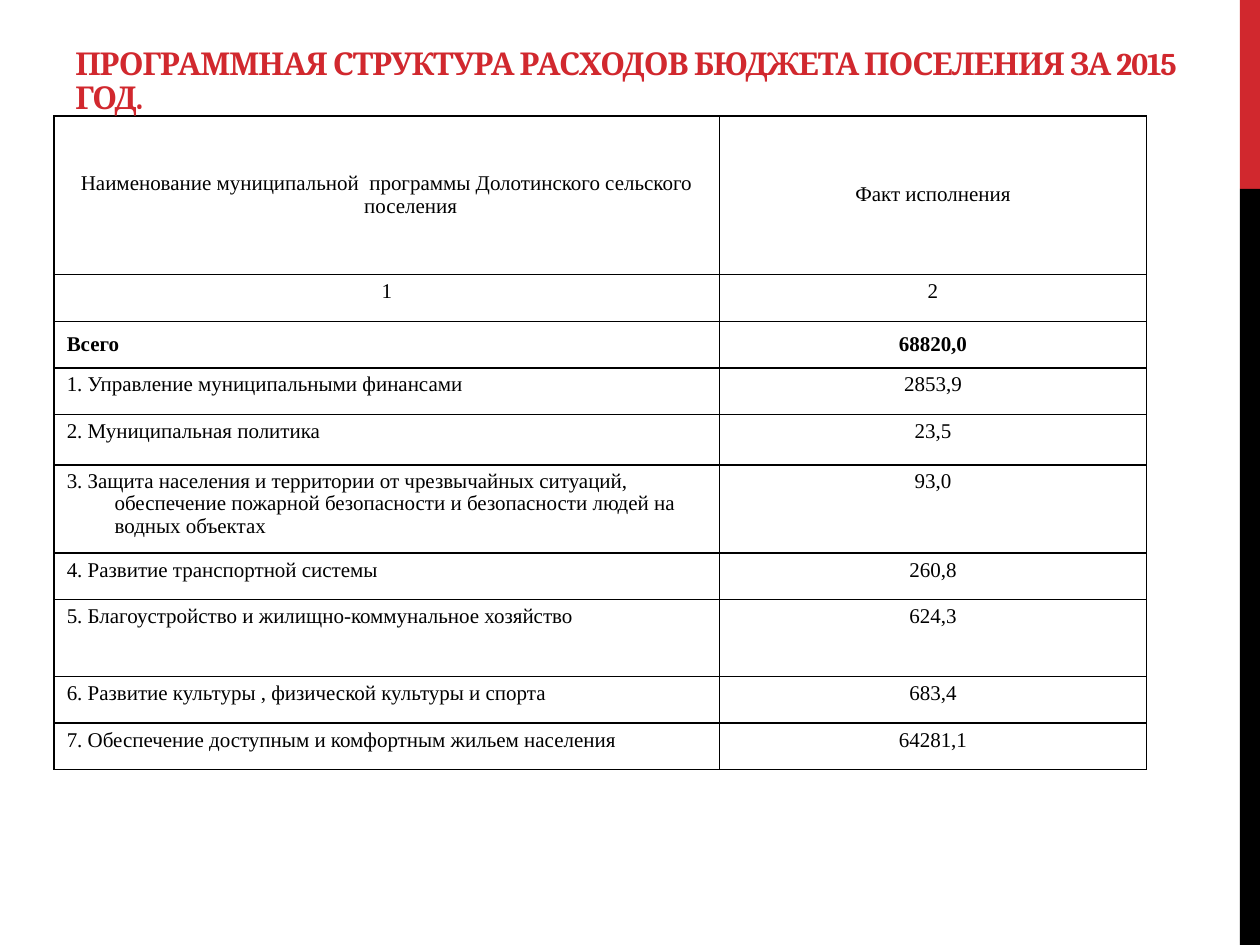
from dataclasses import dataclass
from typing import NamedTuple

from lxml.etree import SubElement
from pptx import Presentation
from pptx.dml.color import RGBColor
from pptx.enum.shapes import MSO_SHAPE
from pptx.enum.text import MSO_ANCHOR, PP_ALIGN
from pptx.oxml.ns import qn
from pptx.util import Inches, Pt


@dataclass(frozen=True)
class Theme:
    red: RGBColor = RGBColor(0xD1, 0x28, 0x2E)
    black: RGBColor = RGBColor(0, 0, 0)
    title_font: str = "Cambria"
    table_font: str = "Times New Roman"
    title_size: int = 18
    table_size: int = 12
    title_tracking: float = -0.6
    border: int = 1
    hanging: float = 0.38


class Band(NamedTuple):
    top: float
    height: float
    color: RGBColor


class Line(NamedTuple):
    name: str
    value: str
    height: float = 0.37
    middle: bool = False
    bold: bool = False
    centered: bool = False


THEME = Theme()
WIDTH, HEIGHT = 10, 7.5
SIDEBAR_LEFT = 0.984
COLUMNS = (5.28, 3.39)
TITLE = "ПРОГРАММНАЯ СТРУКТУРА РАСХОДОВ БЮДЖЕТА ПОСЕЛЕНИЯ ЗА 2015 ГОД."
BANDS = (Band(0, 0.2, THEME.red), Band(0.2, 0.8, THEME.black))
LINES = (
    Line("Наименование муниципальной  программы Долотинского сельского поселения",
         "Факт исполнения", 1.26, middle=True, centered=True),
    Line("1", "2", centered=True),
    Line("Всего", "68820,0", middle=True, bold=True),
    Line("1. Управление муниципальными финансами", "2853,9"),
    Line("2. Муниципальная политика", "23,5", 0.4),
    Line("3. Защита населения и территории от чрезвычайных ситуаций, обеспечение "
         "пожарной безопасности и безопасности людей на водных объектах", "93,0", 0.7),
    Line("4. Развитие транспортной системы", "260,8"),
    Line("5. Благоустройство и жилищно-коммунальное хозяйство", "624,3", 0.61),
    Line("6. Развитие культуры , физической культуры и спорта", "683,4"),
    Line("7. Обеспечение доступным и комфортным жильем населения", "64281,1"),
)


def draw_band(page, band: Band) -> None:
    box = page.shapes.add_shape(
        MSO_SHAPE.RECTANGLE, Inches(WIDTH * SIDEBAR_LEFT), Inches(HEIGHT * band.top),
        Inches(WIDTH * (1 - SIDEBAR_LEFT)), Inches(HEIGHT * band.height))
    box.shadow.inherit = False
    box.fill.solid()
    box.fill.fore_color.rgb = band.color
    box.line.fill.background()


def format_span(span, font: str, size: int, color: RGBColor, bold: bool) -> None:
    span.font.name = font
    span.font.size = Pt(size)
    span.font.color.rgb = color
    span.font.bold = bold


def draw_title(page) -> None:
    box = page.shapes.add_textbox(Inches(0.5), Inches(0.3), Inches(9), Inches(0.67))
    frame = box.text_frame
    frame.word_wrap = True
    frame.vertical_anchor = MSO_ANCHOR.BOTTOM
    frame.text = TITLE
    para = frame.paragraphs[0]
    para.line_spacing = 0.9
    span = para.runs[0]
    format_span(span, THEME.title_font, THEME.title_size, THEME.red, True)
    span.font._element.set("spc", str(round(THEME.title_tracking * 100)))


def draw_borders(cell) -> None:
    properties = cell._tc.get_or_add_tcPr()
    for position, side in enumerate(("lnL", "lnR", "lnT", "lnB")):
        border = properties.makeelement(qn(f"a:{side}"), {"w": str(Pt(THEME.border))})
        properties.insert(position, border)
        fill = SubElement(border, qn("a:solidFill"))
        SubElement(fill, qn("a:srgbClr"), val=str(THEME.black))


def fill_cell(cell, text: str, line: Line, centered: bool) -> None:
    cell.fill.background()
    cell.vertical_anchor = MSO_ANCHOR.MIDDLE if line.middle else MSO_ANCHOR.TOP
    cell.text_frame.text = text
    para = cell.text_frame.paragraphs[0]
    para.alignment = PP_ALIGN.CENTER if centered else PP_ALIGN.LEFT
    para.line_spacing = 0.95
    properties = para._p.get_or_add_pPr()
    properties.set("marL", str(Inches(THEME.hanging)))
    properties.set("indent", str(-Inches(THEME.hanging)))
    format_span(para.runs[0], THEME.table_font, THEME.table_size, THEME.black, line.bold)
    draw_borders(cell)


def draw_table(page) -> None:
    table = page.shapes.add_table(
        len(LINES), len(COLUMNS), Inches(0.43), Inches(0.92), Inches(sum(COLUMNS)),
        Inches(sum(line.height for line in LINES))).table
    table.first_row = table.horz_banding = False
    for column, width in zip(table.columns, COLUMNS):
        column.width = Inches(width)
    for row, line in zip(table.rows, LINES):
        row.height = Inches(line.height)
        fill_cell(row.cells[0], line.name, line, line.centered)
        fill_cell(row.cells[1], line.value, line, True)


def main() -> None:
    deck = Presentation()
    deck.slide_width, deck.slide_height = Inches(WIDTH), Inches(HEIGHT)
    page = deck.slides.add_slide(deck.slide_layouts[6])
    for band in BANDS:
        draw_band(page, band)
    draw_table(page)
    draw_title(page)
    deck.save("out.pptx")


if __name__ == "__main__":
    main()
